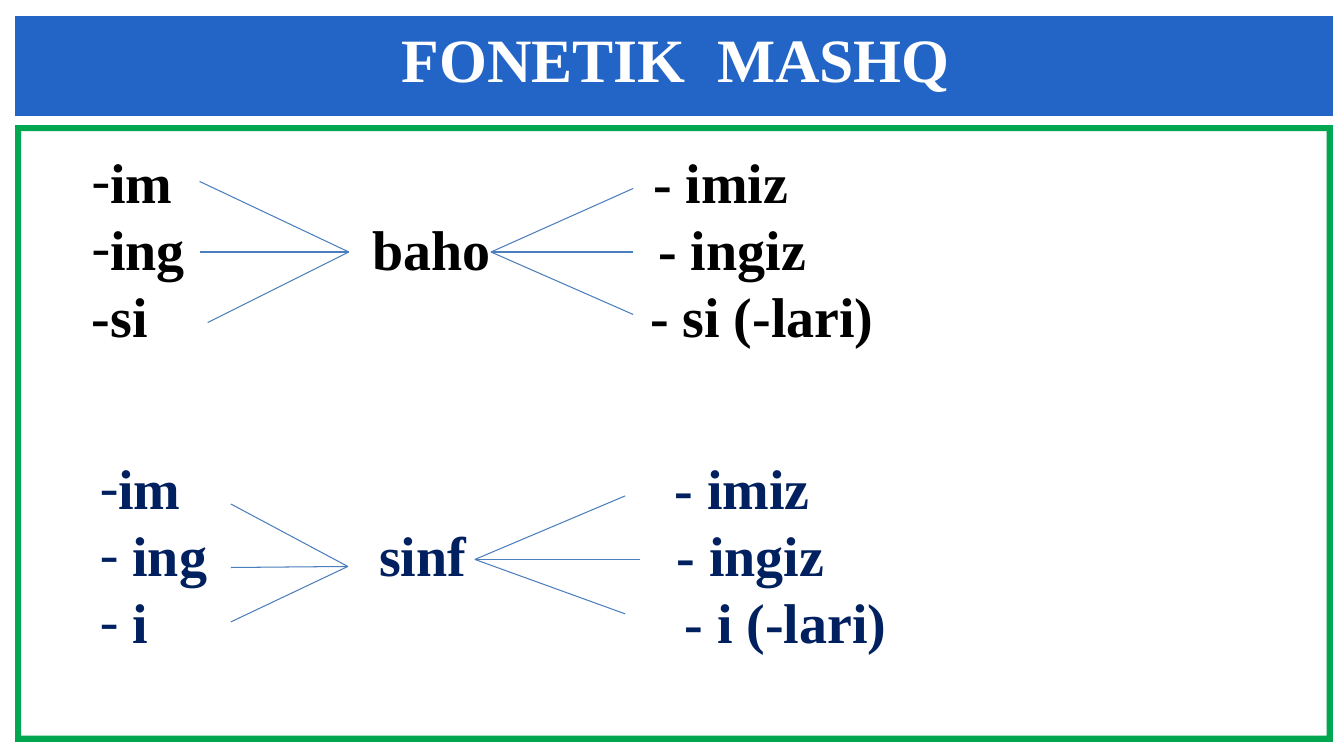
from lxml.etree import SubElement
from pptx import Presentation
from pptx.dml.color import RGBColor
from pptx.enum.shapes import MSO_CONNECTOR as Connector, MSO_SHAPE as Shape
from pptx.enum.text import MSO_ANCHOR as Anchor, MSO_AUTO_SIZE as AutoSize, PP_ALIGN as Align
from pptx.oxml.ns import qn
from pptx.util import Emu, Pt

PX = 9144  # 100 px to the inch
FONT = "Times New Roman"
COLORS = {"banner": "2365C7", "frame": "00A650", "title": "FFFFFF",
          "baho": "000000", "sinf": "002060", "line": "4B7EBC"}

# Each row: bullet, text with tabs, tab stops from the left text edge
BAHO_ROWS = [
    ("-", "im\t- imiz", [557]),
    ("-", "ing\tbaho\t- ingiz", [278, 562]),
    (None, "-si", []),
]
BAHO_LAST_ENDING = [(None, "- si (-lari)", [])]
SINF_ROWS = [
    ("-", "im\t- imiz", [570]),
    ("-", " ing\tsinf\t- ingiz", [277, 572]),
    ("-", " i\t- i (-lari)", [580]),
]

# Each fan: the shared point and the ends of its rays
FANS = [
    ((346, 250), [(198, 180), (198, 250), (206, 320)]),
    ((487, 250), [(628, 187), (628, 250), (628, 312)]),
    ((345, 562), [(229, 500), (229, 563), (229, 617)]),
    ((471, 555), [(620, 492), (635, 555), (620, 609)]),
]


def px(value):
    return Emu(value * PX)


def color(name):
    return RGBColor.from_string(COLORS[name])


def add_panel(page, preset, box, name):
    """Add a plain filled shape behind the text."""
    panel = page.shapes.add_shape(preset, *map(px, box))
    panel.shadow.inherit = False
    panel.fill.solid()
    panel.fill.fore_color.rgb = color(name)
    panel.line.fill.background()
    page.shapes.element.insert(2, panel.element)
    return panel


def place_text(holder, box):
    """Move a text holder and return its text frame."""
    holder.left, holder.top, holder.width, holder.height = map(px, box)
    frame = holder.text_frame
    frame.word_wrap = True
    frame.auto_size = AutoSize.NONE
    frame.vertical_anchor = Anchor.TOP
    frame.margin_left = frame.margin_right = px(10)
    frame.margin_top = frame.margin_bottom = px(5)
    return frame


def add_span(para, text, size, name):
    span = para.add_run()
    span.text = text
    span.font.name = FONT
    span.font.size = Pt(size)
    span.font.bold = True
    span.font.color.rgb = color(name)
    return span


def set_bullet_and_tabs(para, bullet, stops):
    props = para._p.get_or_add_pPr()
    props.set("marL", "0")
    props.set("indent", "0")
    if bullet:
        SubElement(props, qn("a:buFont"), typeface=FONT)
        SubElement(props, qn("a:buChar"), char=bullet)
    else:
        SubElement(props, qn("a:buNone"))
    if stops:
        tabs = SubElement(props, qn("a:tabLst"))
        for stop in stops:
            SubElement(tabs, qn("a:tab"), pos=str(px(stop)), algn="l")


def fill_title(holder):
    para = place_text(holder, (151, 16, 1039, 84)).paragraphs[0]
    para.alignment = Align.CENTER
    add_span(para, "FONETIK", 44, "title")
    gap = add_span(para, " ", 44, "title")
    gap.font._element.set("spc", "1100")  # widen the gap between the words
    add_span(para, "MASHQ", 44, "title")


def fill_suffixes(holder, box, rows, name):
    frame = place_text(holder, box)
    for index, (bullet, text, stops) in enumerate(rows):
        para = frame.add_paragraph() if index else frame.paragraphs[0]
        para.alignment = Align.LEFT
        para.space_before = para.space_after = Pt(0)
        set_bullet_and_tabs(para, bullet, stops)
        add_span(para, text, 40, name)


def add_fan(page, hub, ends):
    for end in ends:
        ray = page.shapes.add_connector(Connector.STRAIGHT, *map(px, hub + end))
        ray.line.color.rgb = color("line")
        ray.line.width = Pt(0.75)
        SubElement(ray.element.spPr, qn("a:effectLst"))


def main():
    deck = Presentation()
    deck.slide_width, deck.slide_height = px(1333), px(750)
    page = deck.slides.add_slide(deck.slide_layouts[3])

    # Banner and frame
    add_panel(page, Shape.RECTANGLE, (15, 16, 1307, 99), "banner")
    border = add_panel(page, Shape.FRAME, (15, 124, 1307, 612), "frame")
    border.adjustments[0] = 0.01

    # Title and the two word groups
    title, baho, sinf = page.placeholders
    fill_title(title)
    fill_suffixes(baho, (81, 141, 1219, 212), BAHO_ROWS, "baho")
    fill_suffixes(sinf, (89, 445, 859, 212), SINF_ROWS, "sinf")

    # Last ending of the first group, in the right column
    ending_box = (635, 274, 300, 79)
    ending = page.shapes.add_textbox(*map(px, ending_box))
    fill_suffixes(ending, ending_box, BAHO_LAST_ENDING, "baho")

    # Lines from the words to their endings
    for hub, ends in FANS:
        add_fan(page, hub, ends)

    deck.save("out.pptx")


if __name__ == "__main__":
    main()
